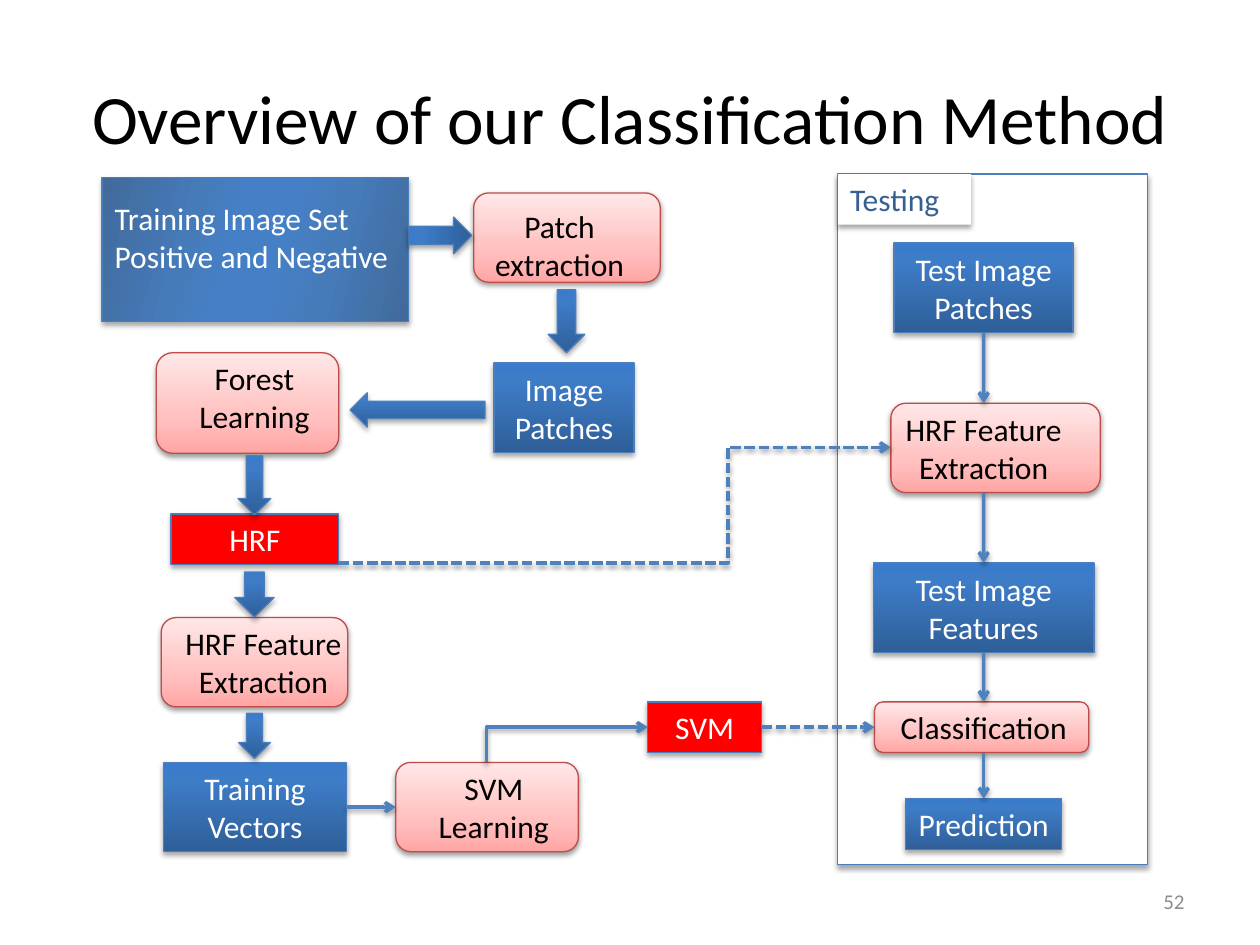
import pptx
import pptx.util
import pptx.oxml
import pptx.oxml.ns
import pptx.dml.color
import pptx.enum.dml
import pptx.enum.shapes
import pptx.enum.text

Cm = pptx.util.Cm
Pt = pptx.util.Pt
RGB = pptx.dml.color.RGBColor
SHAPE = pptx.enum.shapes.MSO_SHAPE
CONNECTOR = pptx.enum.shapes.MSO_CONNECTOR
ALIGN = pptx.enum.text.PP_ALIGN
ANCHOR = pptx.enum.text.MSO_ANCHOR
qn = pptx.oxml.ns.qn
NS = pptx.oxml.ns.nsdecls("a")

BLACK = RGB(0x00, 0x00, 0x00)
WHITE = RGB(0xFF, 0xFF, 0xFF)
RED = RGB(0xFF, 0x00, 0x00)
GREY = RGB(0x8C, 0x8C, 0x8C)
NAVY = RGB(0x37, 0x60, 0x92)
BLUE_LINE = RGB(0x4B, 0x7E, 0xBC)
RED_LINE = RGB(0xBF, 0x4C, 0x48)
ARROW_LINE = RGB(0x4F, 0x81, 0xBD)

DARK, MID, LIGHT = RGB(0x41, 0x6A, 0x9B), RGB(0x46, 0x7B, 0xBA), RGB(0x45, 0x80, 0xC7)
BLUE_GRADIENT = (270, [(0, RGB(0x2F, 0x5F, 0x99)), (80, RGB(0x3D, 0x7C, 0xC7)),
                       (100, RGB(0x3A, 0x7C, 0xCB))])
PINK_GRADIENT = (270, [(0, RGB(0xFF, 0xA6, 0xA5)), (35, RGB(0xFF, 0xC0, 0xBF)),
                       (100, RGB(0xFF, 0xE7, 0xE7))])
TRAINING_GRADIENT = (16, [(0, DARK), (30, MID), (45, LIGHT), (55, LIGHT),
                          (73, MID), (100, DARK)])

BOX_SHADOW = (35, 1.8)
SOFT_SHADOW = (38, 1.6)
TEST_X = 19.83
TRAIN_X = 5.13
TWO_LINES = 1.8
ONE_LINE = 1.02


def add_shadow(effects, alpha, dist):
    effects.append(pptx.oxml.parse_xml(
        f'<a:outerShdw {NS} blurRad="{Pt(3.1)}" dist="{Pt(dist)}" dir="5400000" rotWithShape="0">'
        f'<a:srgbClr val="000000"><a:alpha val="{alpha * 1000}"/></a:srgbClr></a:outerShdw>'))


def set_gradient(sp, angle, stops):
    sp.fill.gradient()
    old = sp.element.spPr.find(qn("a:gradFill"))
    gs = "".join(f'<a:gs pos="{pos * 1000}"><a:srgbClr val="{color}"/></a:gs>'
                 for pos, color in stops)
    new = pptx.oxml.parse_xml(
        f'<a:gradFill {NS} rotWithShape="1"><a:gsLst>{gs}</a:gsLst>'
        f'<a:lin ang="{angle * 60000}" scaled="0"/></a:gradFill>')
    old.getparent().replace(old, new)


def put_text(sp, text, size=18, color=BLACK, align=ALIGN.CENTER, anchor=ANCHOR.MIDDLE):
    tf = sp.text_frame
    tf.word_wrap = True
    tf.vertical_anchor = anchor
    for i, line in enumerate(text.split("\n")):
        p = tf.paragraphs[0] if i == 0 else tf.add_paragraph()
        p.alignment = align
        r = p.add_run()
        r.text = line
        r.font.name = "Calibri"
        r.font.size = Pt(size)
        r.font.color.rgb = color


def add_text(s, x, y, w, h, text, **fmt):
    sp = s.shapes.add_textbox(Cm(x), Cm(y), Cm(w), Cm(h))
    put_text(sp, text, **fmt)
    return sp


def add_block(s, kind, x, y, w, h, fill=BLUE_GRADIENT, line=BLUE_LINE, shadow=BOX_SHADOW):
    sp = s.shapes.add_shape(kind, Cm(x), Cm(y), Cm(w), Cm(h))
    if isinstance(fill, RGB):
        sp.fill.solid()
        sp.fill.fore_color.rgb = fill
    else:
        set_gradient(sp, *fill)
    if line is None:
        sp.line.fill.background()
    else:
        sp.line.color.rgb = line
        sp.line.width = Pt(0.75)
    sp.shadow.inherit = False
    add_shadow(sp.element.spPr.find(qn("a:effectLst")), *shadow)
    return sp


def add_data(s, x, y, w, h, text, fill=BLUE_GRADIENT):
    sp = add_block(s, SHAPE.RECTANGLE, x, y, w, h, fill)
    put_text(sp, text, color=WHITE)
    return sp


def add_process(s, x, y, w, h, text, text_x, text_w, text_y=None, text_h=TWO_LINES):
    sp = add_block(s, SHAPE.FLOWCHART_ALTERNATE_PROCESS, x, y, w, h,
                   PINK_GRADIENT, RED_LINE, SOFT_SHADOW)
    label = add_text(s, text_x, y if text_y is None else text_y, text_w, text_h, text)
    return sp, label


def add_link(s, x1, y1, x2, y2, kind=CONNECTOR.STRAIGHT, dashed=False):
    c = s.shapes.add_connector(kind, Cm(x1), Cm(y1), Cm(x2), Cm(y2))
    c.line.color.rgb = ARROW_LINE
    c.line.width = Pt(2)
    if dashed:
        c.line.dash_style = pptx.enum.dml.MSO_LINE.SQUARE_DOT
    spPr = c.element.spPr
    spPr.find(qn("a:ln")).append(pptx.oxml.parse_xml(f'<a:tailEnd {NS} type="arrow"/>'))
    effects = pptx.oxml.parse_xml(f"<a:effectLst {NS}/>")
    spPr.append(effects)
    add_shadow(effects, *SOFT_SHADOW)
    return c


def join(s, start, start_side, end, end_side, dashed=False):
    c = add_link(s, 0, 0, 1, 1, dashed=dashed)
    c.begin_connect(start, start_side)
    c.end_connect(end, end_side)


def add_training(s):
    add_block(s, SHAPE.RECTANGLE, 2.06, 3.58, 6.17, 2.9, TRAINING_GRADIENT)
    add_text(s, 2.06, 3.89, 6.17, 1.8, "Training Image Set\nPositive and Negative",
             color=WHITE, align=ALIGN.LEFT, anchor=ANCHOR.TOP)
    add_process(s, 9.55, 3.89, 3.76, TWO_LINES, "Patch extraction", 9.5, 3.56, text_y=4.04)
    add_data(s, 9.96, 7.32, 2.82, TWO_LINES, "Image Patches")
    add_process(s, 3.15, 7.11, 3.68, 2.03, "Forest Learning", 3.15, 3.96)
    add_data(s, 3.45, 10.36, 3.38, ONE_LINE, "HRF", RED)
    add_process(s, 3.25, 12.45, 3.76, TWO_LINES, "HRF Feature Extraction", 3.43, 3.76)
    vectors = add_data(s, 3.3, 15.37, 3.68, TWO_LINES, "Training Vectors")
    learning, _ = add_process(s, 7.98, 15.37, 3.68, TWO_LINES, "SVM Learning", 8.56, 2.79)
    join(s, vectors, 3, learning, 1)

    for center, y, w, h in [(TRAIN_X, 9.19, 0.66, 1.19), (TRAIN_X, 11.53, 0.79, 0.91),
                            (TRAIN_X, 14.38, 0.64, 0.91), (11.42, 5.84, 0.74, 1.27)]:
        add_block(s, SHAPE.DOWN_ARROW, center - w / 2, y, w, h)
    add_block(s, SHAPE.DOWN_ARROW, 8.51, 4.11, 0.74, 1.27).rotation = 270
    add_block(s, SHAPE.LEFT_ARROW, 7.06, 7.92, 2.72, 0.69)


def add_testing(s):
    add_block(s, SHAPE.RECTANGLE, 16.89, 3.51, 6.25, 13.92, WHITE)
    tag = add_block(s, SHAPE.RECTANGLE, 16.89, 3.51, 2.69, ONE_LINE, WHITE, None)
    put_text(tag, "Testing", color=NAVY, align=ALIGN.LEFT)

    patches, features, prediction = [
        add_data(s, TEST_X - w / 2, y, w, h, text) for y, w, h, text in [
            (4.9, 3.61, TWO_LINES, "Test Image Patches"),
            (11.35, 4.45, TWO_LINES, "Test Image Features"),
            (16.1, 3.15, ONE_LINE, "Prediction")]]
    _, extraction = add_process(s, 17.96, 8.13, 4.22, TWO_LINES, "HRF Feature Extraction",
                                TEST_X - 2.45, 4.9)
    _, classification = add_process(s, 17.63, 14.15, 4.32, ONE_LINE, "Classification",
                                    TEST_X - 2.2, 4.4, text_h=ONE_LINE)
    steps = [patches, extraction, features, classification, prediction]
    for start, end in zip(steps, steps[1:]):
        join(s, start, 2, end, 0)
    return classification


def add_models(s, classification):
    svm = add_data(s, 13.06, 14.15, 2.29, ONE_LINE, "SVM", RED)
    join(s, svm, 3, classification, 1, dashed=True)

    to_svm = add_link(s, 11.79, 16.64, 11.08, 13.39, CONNECTOR.ELBOW)
    to_svm.element.spPr.find(qn("a:prstGeom")).set("prst", "bentConnector2")
    to_svm.element.spPr.find(qn("a:xfrm")).set("rot", "5400000")

    to_extraction = add_link(s, 6.83, 11.35, 17.96, 9.02, CONNECTOR.ELBOW, dashed=True)
    guides = to_extraction.element.spPr.find(qn("a:prstGeom")).find(qn("a:avLst"))
    guides.append(pptx.oxml.parse_xml(f'<a:gd {NS} name="adj1" fmla="val 70500"/>'))


def main():
    prs = pptx.Presentation()
    prs.slide_width, prs.slide_height = Cm(25.4), Cm(19.05)
    s = prs.slides.add_slide(prs.slide_layouts[6])
    classification = add_testing(s)
    add_text(s, 1.27, 0.76, 22.86, 3.18, "Overview of our Classification Method", size=39.6)
    add_training(s)
    add_models(s, classification)
    add_text(s, 18.21, 17.65, 5.92, ONE_LINE, "52", size=12, color=GREY, align=ALIGN.RIGHT)
    prs.save("out.pptx")


if __name__ == "__main__":
    main()
